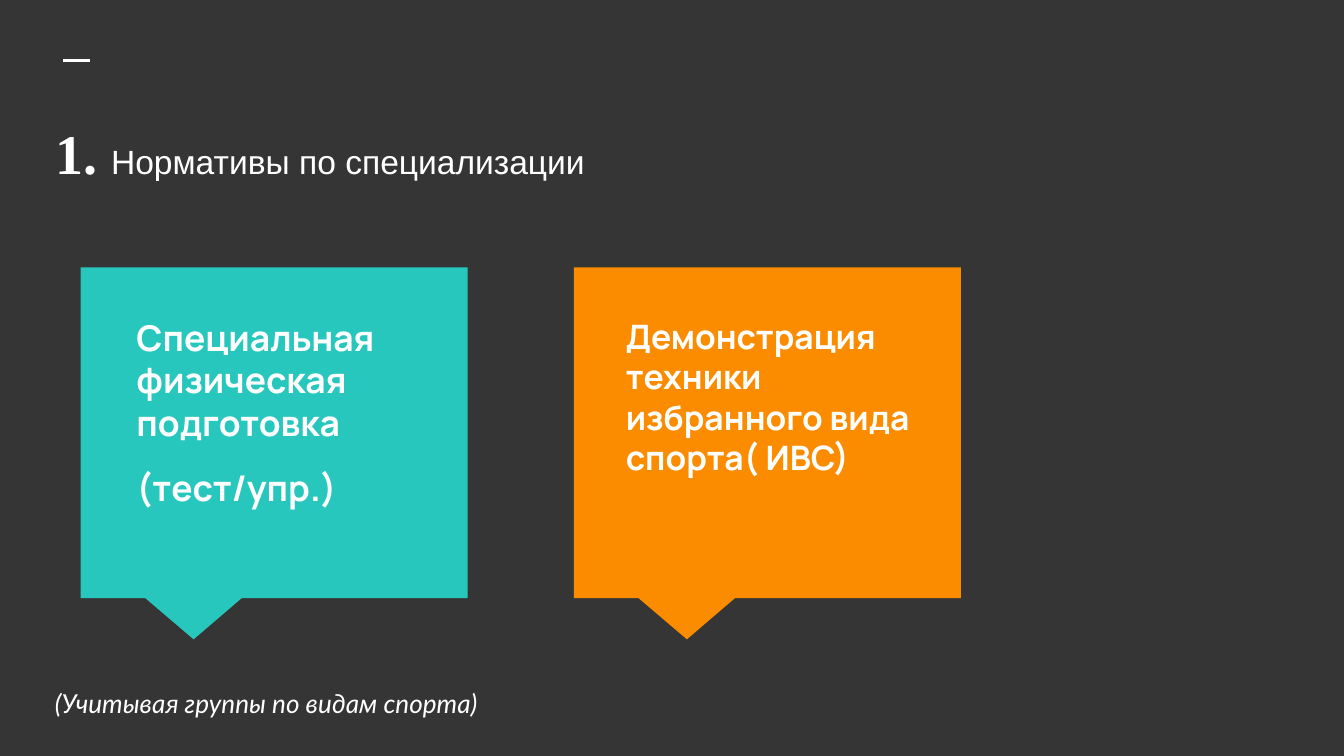
from lxml import etree
from pptx import Presentation
from pptx.dml.color import RGBColor
from pptx.enum.shapes import MSO_CONNECTOR, MSO_SHAPE
from pptx.enum.text import MSO_ANCHOR, MSO_AUTO_SIZE, PP_ALIGN
from pptx.oxml.ns import qn
from pptx.util import Inches, Pt

STRAIGHT = MSO_CONNECTOR.STRAIGHT
CALLOUT = MSO_SHAPE.RECTANGULAR_CALLOUT
TOP, MIDDLE = MSO_ANCHOR.TOP, MSO_ANCHOR.MIDDLE
LEFT = PP_ALIGN.LEFT
NO_FIT = MSO_AUTO_SIZE.NONE

CHARCOAL = RGBColor(0x35, 0x35, 0x35)
WHITE = RGBColor(0xFF, 0xFF, 0xFF)
TEAL = RGBColor(0x27, 0xC7, 0xBD)
ORANGE = RGBColor(0xFB, 0x8C, 0x00)

WIDTH = 10
HEIGHT = WIDTH * 9 / 16
MARGIN = 0.31
CARD_LEFT, CARD_TOP = 0.6, 1.99
CARD_WIDTH, CARD_HEIGHT = 2.88, 2.46
CARD_PITCH = 3.67

CARDS = [
    (TEAL, ["Специальная физическая подготовка", "(тест/упр.)"], 19, 0.11),
    (ORANGE, ["Демонстрация техники избранного вида спорта( ИВС)"], 18, 0.1),
]


def place(shape, box):
    shape.left, shape.top, shape.width, shape.height = map(Inches, box)


def prepare_frame(shape, anchor=TOP):
    frame = shape.text_frame
    frame.word_wrap = True
    frame.auto_size = NO_FIT
    frame.vertical_anchor = anchor
    frame.margin_left = frame.margin_right = Inches(0.1)
    frame.margin_top = frame.margin_bottom = Inches(0.1)
    return frame


def write(paragraph, text, *, size, font, bold=False, italic=False, before=0):
    paragraph.alignment = LEFT
    paragraph.line_spacing = 1.0
    paragraph.space_before = Pt(before)
    run = paragraph.add_run()
    run.text = text
    run.font.size = Pt(size)
    run.font.name = font
    run.font.bold = bold
    run.font.italic = italic
    run.font.color.rgb = WHITE


def add_heading(slide, box):
    left, top, _, _ = box
    dash_left, dash_top = left + 0.16, top - 0.33
    dash = slide.shapes.add_connector(
        STRAIGHT, Inches(dash_left), Inches(dash_top),
        Inches(dash_left + 0.2), Inches(dash_top))
    dash.line.color.rgb = WHITE
    dash.line.width = Pt(1.5)
    etree.SubElement(dash._element.spPr, qn("a:effectLst"))

    heading = slide.shapes.title
    place(heading, box)
    line = prepare_frame(heading).paragraphs[0]
    write(line, "1. ", size=30, font="Times New Roman", bold=True)
    write(line, "Нормативы по специализации", size=18, font="Arial")


def add_card(slide, box, color, lines, size, inset_share):
    left, top, width, height = box
    card = slide.shapes.add_shape(CALLOUT, *map(Inches, box))
    card.adjustments[0], card.adjustments[1] = -0.208, 0.625
    card.shadow.inherit = False
    card.fill.solid()
    card.fill.fore_color.rgb = color
    card.line.fill.background()

    label_box = (left + width * inset_share, top + 0.26, width * 0.81, height * 0.86)
    label = slide.shapes.add_textbox(*map(Inches, label_box))
    frame = prepare_frame(label)
    for index, text in enumerate(lines):
        paragraph = frame.add_paragraph() if index else frame.paragraphs[0]
        write(paragraph, text, size=size, font="Manrope", bold=True,
              before=12 if index else 0)


def add_footnote(slide, box):
    footnote = slide.shapes.add_textbox(*map(Inches, box))
    frame = prepare_frame(footnote, MIDDLE)
    write(frame.paragraphs[0], "(Учитывая группы по видам спорта)",
          size=14, font="Lato", italic=True)


def main():
    deck = Presentation()
    deck.slide_width, deck.slide_height = Inches(WIDTH), Inches(HEIGHT)
    slide = deck.slides.add_slide(deck.slide_layouts[5])
    slide.background.fill.solid()
    slide.background.fill.fore_color.rgb = CHARCOAL

    add_heading(slide, (MARGIN, 0.78, 9.43, 1.12))
    for column, card in enumerate(CARDS):
        card_left = CARD_LEFT + column * CARD_PITCH
        add_card(slide, (card_left, CARD_TOP, CARD_WIDTH, CARD_HEIGHT), *card)
    add_footnote(slide, (MARGIN, 5.09, 6.83, 0.28))
    deck.save("out.pptx")


if __name__ == "__main__":
    main()
